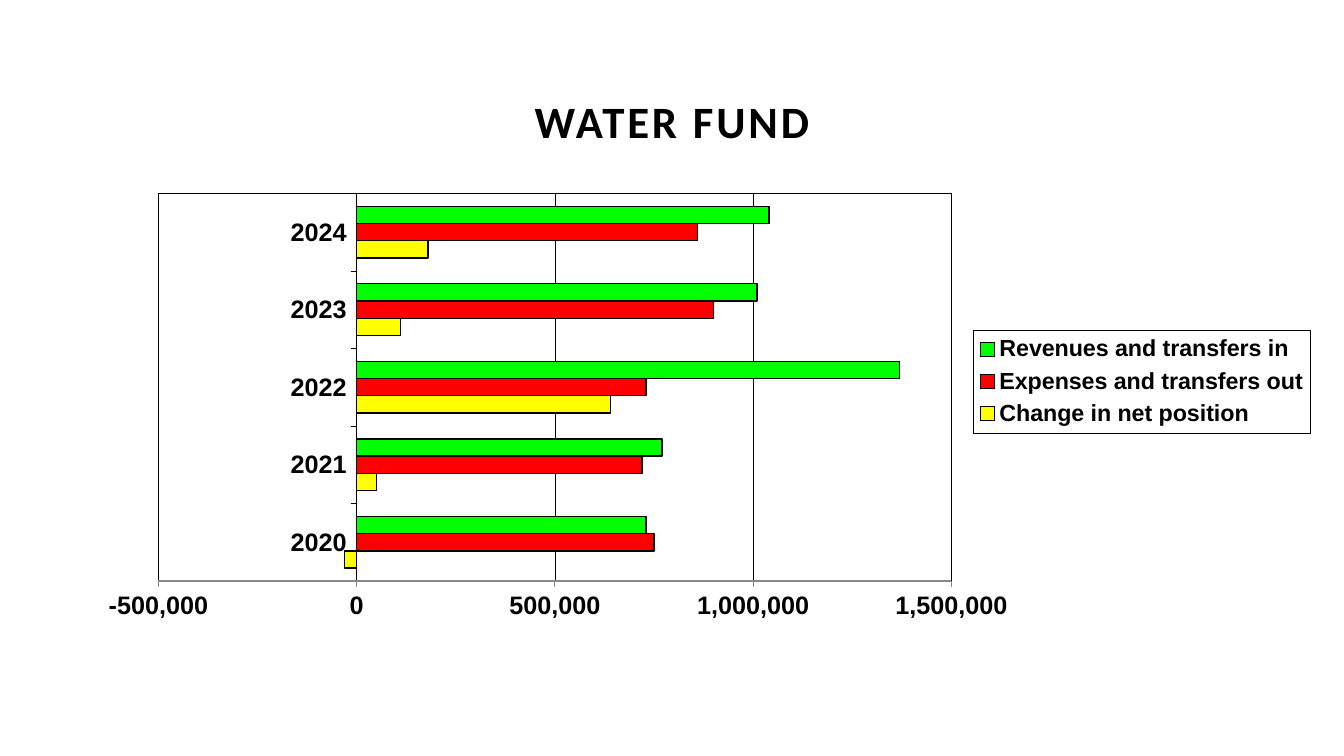
"""Builds the Water Fund slide: a title above a clustered bar chart by year."""
from lxml import etree
from pptx import Presentation
from pptx.chart.data import CategoryChartData
from pptx.dml.color import RGBColor
from pptx.enum.chart import XL_CHART_TYPE, XL_LEGEND_POSITION, XL_TICK_MARK
from pptx.enum.text import MSO_ANCHOR, PP_ALIGN
from pptx.oxml import parse_xml
from pptx.oxml.ns import nsdecls, qn
from pptx.util import Inches, Pt

BAR_CLUSTERED = XL_CHART_TYPE.BAR_CLUSTERED
LEGEND_RIGHT = XL_LEGEND_POSITION.RIGHT
TICK_OUTSIDE = XL_TICK_MARK.OUTSIDE
MIDDLE = MSO_ANCHOR.MIDDLE
CENTER = PP_ALIGN.CENTER

BLACK = RGBColor(0, 0, 0)
YELLOW = RGBColor(0xFF, 0xFF, 0)
RED = RGBColor(0xFF, 0, 0)
GREEN = RGBColor(0, 0xFF, 0)

YEARS = ["2020", "2021", "2022", "2023", "2024"]
FUND_SERIES = [
    ("Change in net position", YELLOW, [-30000, 50000, 640000, 110000, 180000]),
    ("Expenses and transfers out", RED, [750000, 720000, 730000, 900000, 860000]),
    ("Revenues and transfers in", GREEN, [730000, 770000, 1370000, 1010000, 1040000]),
]


def style_font(font, name, size):
    font.name = name
    font.size = Pt(size)
    font.bold = True
    font.color.rgb = BLACK


def manual_layout(target, x, y, w, h):
    inner = '<c:layoutTarget val="inner"/>' if target == "inner" else ""
    return parse_xml(
        f'<c:layout {nsdecls("c")}><c:manualLayout>{inner}'
        '<c:xMode val="edge"/><c:yMode val="edge"/>'
        f'<c:x val="{x}"/><c:y val="{y}"/><c:w val="{w}"/><c:h val="{h}"/>'
        '</c:manualLayout></c:layout>')


prs = Presentation()
prs.slide_width = Inches(13.33)
prs.slide_height = Inches(7.5)
slide = prs.slides.add_slide(prs.slide_layouts[6])

heading = slide.shapes.add_textbox(
    Inches(0.25), Inches(0.62), Inches(12.83), Inches(1.15)).text_frame
heading.word_wrap = True
heading.vertical_anchor = MIDDLE
heading_line = heading.paragraphs[0]
heading_line.alignment = CENTER
heading_run = heading_line.add_run()
heading_run.text = "WATER FUND"
style_font(heading_line.font, "Calibri", 32)
heading_run.font._element.set("spc", "200")

fund_data = CategoryChartData(number_format="#,##0")
fund_data.categories = YEARS
for name, color, values in FUND_SERIES:
    fund_data.add_series(name, values)

chart = slide.shapes.add_chart(
    BAR_CLUSTERED, Inches(0.25), Inches(1.88), Inches(12.83), Inches(4.82),
    fund_data).chart
chart.has_title = False
style_font(chart.font, "Arial", 18)

bars = chart.plots[0]
bars.gap_width = 150
bars.overlap = 0
bars.vary_by_categories = False
for series, (name, color, values) in zip(bars.series, FUND_SERIES):
    series.invert_if_negative = False
    series.format.fill.solid()
    series.format.fill.fore_color.rgb = color
    series.format.line.color.rgb = BLACK
    series.format.line.width = Pt(1)

years_axis = chart.category_axis
amount_axis = chart.value_axis
amount_axis.minimum_scale = -500000
amount_axis.maximum_scale = 1500000
amount_axis.major_unit = 500000
amount_axis.has_major_gridlines = True
amount_axis.tick_labels.number_format = "#,##0"
amount_axis.tick_labels.number_format_is_linked = False
for axis in (years_axis, amount_axis):
    axis.major_tick_mark = TICK_OUTSIDE
    style_font(axis.tick_labels.font, "Arial", 18)
for line in (years_axis.format.line, amount_axis.major_gridlines.format.line):
    line.color.rgb = BLACK
    line.width = Pt(0.25)

chart.has_legend = True
legend = chart.legend
legend.position = LEGEND_RIGHT
legend.include_in_layout = False
style_font(legend.font, "Arial", 16.6)

plot_area = chart._chartSpace.chart.plotArea
for layout in plot_area.findall(qn("c:layout")):
    plot_area.remove(layout)
plot_area.insert(0, manual_layout("inner", 0.103, 0.008, 0.613, 0.798))
legend_box = legend._element
for layout in legend_box.findall(qn("c:layout")):
    legend_box.remove(layout)
legend_box.find(qn("c:legendPos")).addnext(
    manual_layout("outer", 0.733, 0.289, 0.26, 0.212))

border = parse_xml(
    f'<c:spPr {nsdecls("c", "a")}><a:noFill/><a:ln w="3175"><a:solidFill>'
    f'<a:srgbClr val="{BLACK}"/></a:solidFill></a:ln></c:spPr>')
plot_area.append(border)
legend_border = etree.fromstring(etree.tostring(border))
legend_box.find(qn("c:txPr")).addprevious(legend_border)

prs.save("out.pptx")
